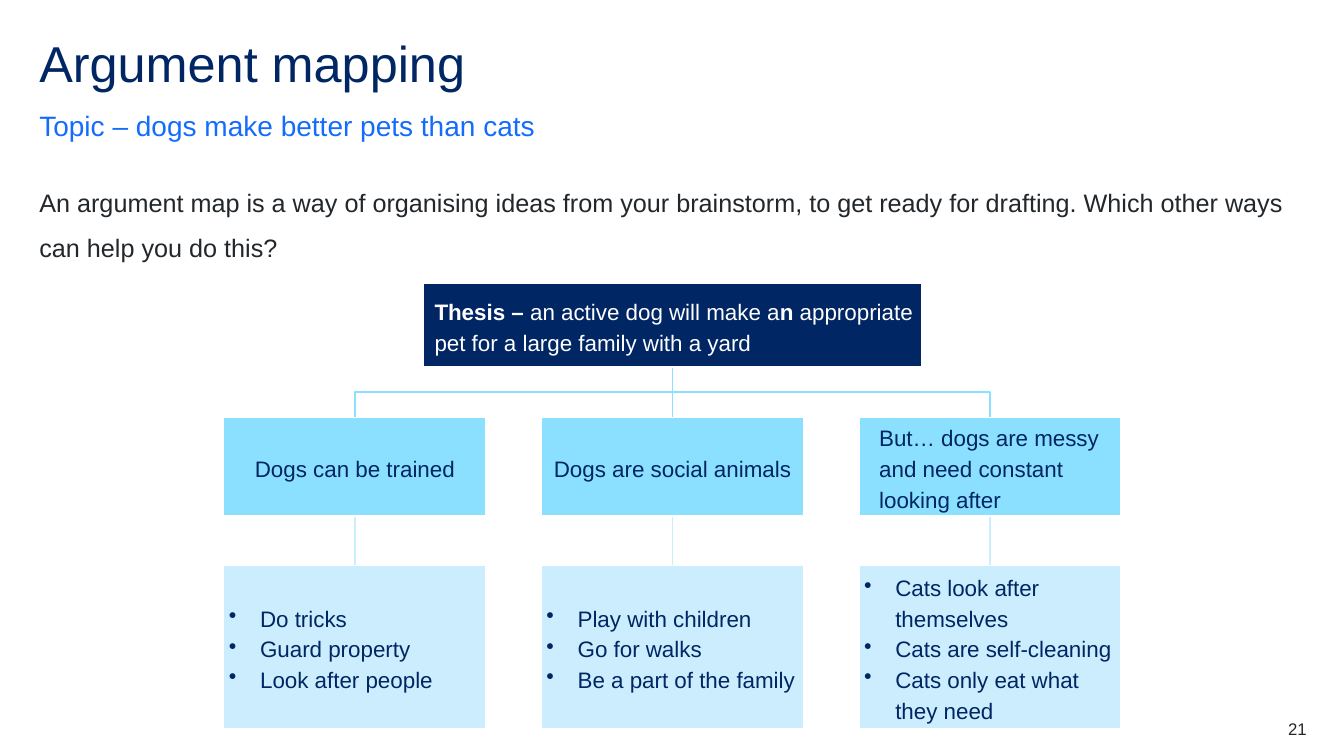
import pptx
import pptx.dml.color
import pptx.enum.shapes
import pptx.enum.text
import pptx.oxml
import pptx.oxml.ns
import pptx.util

PX = 9144
NAVY, SKY, PALE = "002664", "8CE0FF", "CBEDFD"
BLUE, INK, WHITE = "146CFD", "22272B", "FFFFFF"
ALIGN = pptx.enum.text.PP_ALIGN
ANCHOR = pptx.enum.text.MSO_ANCHOR

COLUMN_LEFT, COLUMN_STEP, COLUMN_WIDTH = 222, 315, 260
REASON_TOP, REASON_HEIGHT = 414, 98
POINTS_TOP, POINTS_HEIGHT = 561, 162
THESIS = (420, 281, 494, 83)
THESIS_TEXT = ("**Thesis –** an active dog will make a**n** appropriate "
               "pet for a large family with a yard")
COLUMNS = [
    ("Dogs can be trained", ALIGN.CENTER, 0,
     ["Do tricks", "Guard property", "Look after people"]),
    ("Dogs are social animals", ALIGN.CENTER, 0,
     ["Play with children", "Go for walks", "Be a part of the family"]),
    ("But… dogs are messy and need constant looking after", ALIGN.LEFT, 19,
     ["Cats look after themselves", "Cats are self-cleaning",
      "Cats only eat what they need"]),
]


def colour(code):
    return pptx.dml.color.RGBColor.from_string(code)


def emu(*lengths):
    return [length * PX for length in lengths]


def indent(para, margin, hanging, bullet):
    properties = para._p.get_or_add_pPr()
    properties.set("marL", str(margin * PX))
    properties.set("indent", str(-hanging * PX))
    if bullet:
        mark = pptx.oxml.parse_xml(
            f'<a:buChar {pptx.oxml.ns.nsdecls("a")} char="•"/>')
        properties.append(mark)


def write(shape, lines, size, code, spacing, align=ALIGN.LEFT,
          anchor=ANCHOR.TOP, inset=0, margin=0, hanging=0, bullet=False, after=0):
    frame = shape.text_frame
    frame.word_wrap = True
    frame.vertical_anchor = anchor
    frame.margin_left = frame.margin_right = inset * PX
    frame.margin_top = frame.margin_bottom = inset * PX
    for row, line in enumerate(lines):
        para = frame.add_paragraph() if row else frame.paragraphs[0]
        para.alignment = align
        para.line_spacing = spacing
        para.space_after = pptx.util.Pt(after)
        indent(para, margin, hanging, bullet)
        for position, words in enumerate(line.split("**")):
            if words:
                span = para.add_run()
                span.text = words
                span.font.name = "Arial"
                span.font.size = pptx.util.Pt(size)
                span.font.bold = position % 2 == 1
                span.font.color.rgb = colour(code)


def add_text(page, area, words, size, code, spacing, **style):
    box = page.shapes.add_textbox(*emu(*area))
    write(box, [words], size, code, spacing, **style)


def add_card(page, area, fill, lines, code=NAVY, **style):
    card = page.shapes.add_shape(
        pptx.enum.shapes.MSO_SHAPE.RECTANGLE, *emu(*area))
    card.shadow.inherit = False
    card.fill.solid()
    card.fill.fore_color.rgb = colour(fill)
    set_line(card, WHITE)
    write(card, lines, 16, code, 1.14, anchor=ANCHOR.MIDDLE, **style)
    return card


def set_line(shape, code):
    shape.line.color.rgb = colour(code)
    shape.line.width = pptx.util.Pt(1)


def add_link(page, upper, lower, code):
    link = page.shapes.add_connector(
        pptx.enum.shapes.MSO_CONNECTOR.STRAIGHT, 0, 0, 0, 0)
    link.begin_connect(upper, 2)
    link.end_connect(lower, 0)
    set_line(link, code)
    link._element.spPr.append(
        pptx.oxml.parse_xml(f'<a:effectLst {pptx.oxml.ns.nsdecls("a")}/>'))
    upper._element.addprevious(link._element)


def add_branch(page, start, end):
    (start_x, start_y), (end_x, end_y) = start, end
    middle = (start_y + end_y) // 2
    builder = page.shapes.build_freeform(start_x, start_y, scale=PX)
    builder.add_line_segments(
        [(start_x, middle), (end_x, middle), end], close=False)
    branch = builder.convert_to_shape()
    branch.shadow.inherit = False
    branch.fill.background()
    set_line(branch, SKY)


def add_map(page):
    left, top, width, height = THESIS
    root = (left + width // 2, top + height)
    for column in (0, 2):
        centre = COLUMN_LEFT + column * COLUMN_STEP + COLUMN_WIDTH // 2
        add_branch(page, root, (centre, REASON_TOP))
    thesis = add_card(page, THESIS, NAVY, [THESIS_TEXT], WHITE,
                      inset=1, margin=10)
    for column, (reason, align, margin, points) in enumerate(COLUMNS):
        x = COLUMN_LEFT + column * COLUMN_STEP
        claim = add_card(page, (x, REASON_TOP, COLUMN_WIDTH, REASON_HEIGHT),
                         SKY, [reason], align=align, inset=1, margin=margin)
        support = add_card(page, (x, POINTS_TOP, COLUMN_WIDTH, POINTS_HEIGHT),
                           PALE, points, inset=5, margin=31, hanging=31,
                           bullet=True)
        add_link(page, claim, support, PALE)
        if column == 1:
            add_link(page, thesis, claim, SKY)


def main():
    deck = pptx.Presentation()
    deck.slide_width, deck.slide_height = emu(1333, 750)
    page = deck.slides.add_slide(deck.slide_layouts[6])
    add_text(page, (39, 39, 1256, 60), "Argument mapping", 36, NAVY, 0.9)
    add_text(page, (39, 107, 1256, 34), "Topic – dogs make better pets than cats",
             20, BLUE, 1.5, anchor=ANCHOR.BOTTOM, after=12)
    add_text(page, (39, 171, 1256, 100),
             "An argument map is a way of organising ideas from your brainstorm, "
             "to get ready for drafting. Which other ways can help you do this?",
             18, INK, 1.5, after=12)
    add_map(page)
    add_text(page, (1217, 713, 79, 20), "21", 12, INK, 1.0, align=ALIGN.RIGHT)
    deck.save("out.pptx")


if __name__ == "__main__":
    main()
